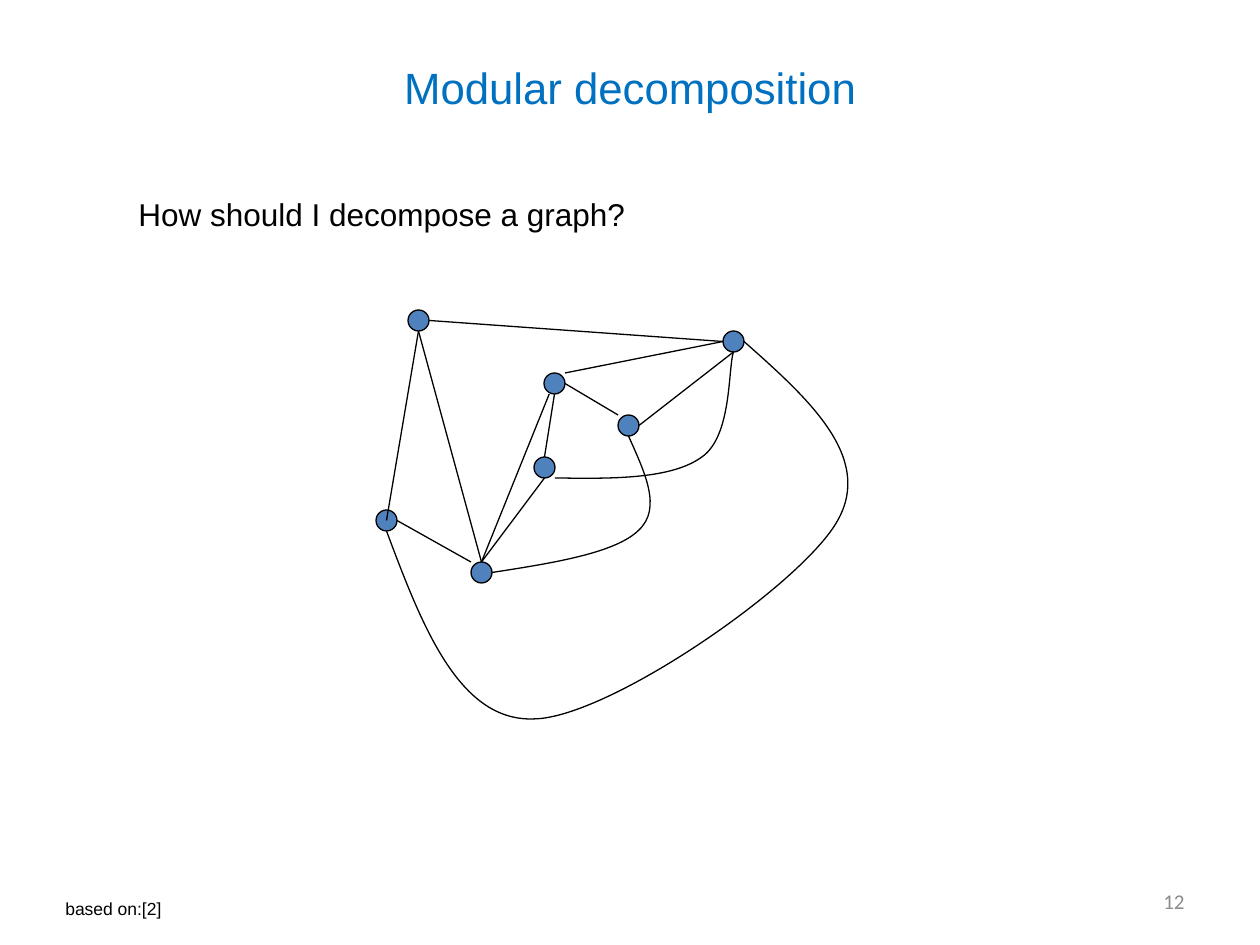
from lxml import etree
from pptx import Presentation
from pptx import util as u
from pptx.dml.color import RGBColor
from pptx.enum import shapes, text
from pptx.oxml.ns import qn

PX = 914400 / 126
NODE = 21

NODES = {
    "A": (32, 0), "B": (347, 21), "C": (168, 63), "D": (242, 105),
    "E": (158, 147), "F": (0, 200), "G": (95, 252),
}
# Places on a node as fractions of its size
PORTS = {
    "top": (0.5, 0), "right": (1, 0.5), "bottom": (0.5, 1), "left": (0, 0.5),
    "top left": (0, 0), "top right": (1, 0), "bottom right": (1, 1),
    "low left": (0.25, 1), "center": (0.5, 0.5),
}
EDGES = [
    ("E", "top", "C", "bottom"), ("C", "right", "D", "top left"),
    ("D", "right", "B", "bottom"), ("C", "top right", "B", "left"),
    ("E", "bottom", "G", "top"), ("C", "low left", "G", "top"),
    ("F", "right", "G", "top left"), ("F", "center", "A", "bottom"),
    ("G", "top", "A", "bottom"), ("A", "right", "B", "left"),
]
# Curved edges: start, Bezier points between, end
CURVES = [
    (("E", "bottom right"),
     [(238, 169), (296, 169), (326, 147), (356, 126), (352, 60)],
     ("B", "bottom")),
    (("D", "bottom"),
     [(269, 163), (286, 198), (263, 220), (240, 243), (178, 253)],
     ("G", "right")),
    (("B", "right"),
     [(433, 89), (497, 147), (462, 210), (428, 273), (233, 408),
      (158, 409), (83, 412), (46, 316)],
     ("F", "bottom")),
]


def px(n):
    return u.Emu(round(n * PX))


def color(value):
    return RGBColor.from_string(value)


def outline(sp):
    sp.line.color.rgb = color("000000")
    sp.line.width = u.Pt(0.75)


def add_text(s, box, words, size, hue="000000", font="Arial",
             align=text.PP_ALIGN.LEFT, anchor=text.MSO_ANCHOR.TOP):
    tf = s.shapes.add_textbox(*map(px, box)).text_frame
    tf.word_wrap = True
    tf.vertical_anchor = anchor
    tf.text = words
    p = tf.paragraphs[0]
    p.alignment = align
    r = p.runs[0]
    r.font.name = font
    r.font.size = u.Pt(size)
    r.font.color.rgb = color(hue)


def add_curve(s, points):
    """Draw cubic Bezier segments through a list of points."""
    points = [(px(x), px(y)) for x, y in points]
    builder = s.shapes.build_freeform(*points[0])
    builder.add_line_segments(points[1:], close=False)
    sp = builder.convert_to_shape()
    sp.shadow.inherit = False
    sp.fill.background()
    outline(sp)
    # Turn each three line segments into one cubic segment
    path = next(sp._element.iter(qn("a:path")))
    lines = path.findall(qn("a:lnTo"))
    for i in range(0, len(lines), 3):
        cubic = etree.SubElement(path, qn("a:cubicBezTo"))
        for line in lines[i:i + 3]:
            cubic.append(line[0])
            path.remove(line)


def add_graph(s, left, top):
    def port(node, place):
        x, y = NODES[node]
        fx, fy = PORTS[place]
        return left + x + NODE * fx, top + y + NODE * fy

    # Nodes
    for x, y in NODES.values():
        sp = s.shapes.add_shape(shapes.MSO_SHAPE.OVAL, px(left + x),
                                px(top + y), px(NODE), px(NODE))
        sp.shadow.inherit = False
        sp.fill.solid()
        sp.fill.fore_color.rgb = color("4F81BD")
        outline(sp)

    # Straight edges
    for a, a_place, b, b_place in EDGES:
        ends = port(a, a_place) + port(b, b_place)
        edge = s.shapes.add_connector(shapes.MSO_CONNECTOR.STRAIGHT,
                                      *map(px, ends))
        outline(edge)
        etree.SubElement(edge._element.spPr, qn("a:effectLst"))

    # Curved edges
    for start, between, end in CURVES:
        middle = [(left + x, top + y) for x, y in between]
        add_curve(s, [port(*start), *middle, port(*end)])


def add_footer(s, left, top, width):
    add_text(s, (left, top + 16, 232, 34), "based on:[2]", 10)
    add_text(s, (left + width - 294, top, 294, 50), "12", 12, "8C8C8C",
             "Calibri", text.PP_ALIGN.RIGHT, text.MSO_ANCHOR.MIDDLE)


def main():
    prs = Presentation()
    prs.slide_width, prs.slide_height = u.Inches(10), u.Inches(7.5)
    s = prs.slides.add_slide(prs.slide_layouts[6])

    # Title and question
    add_text(s, (63, 38, 1134, 98), "Modular decomposition", 25, "0070C0",
             align=text.PP_ALIGN.CENTER, anchor=text.MSO_ANCHOR.MIDDLE)
    add_text(s, (126, 189, 924, 693), "How should I decompose a graph?", 18)

    add_graph(s, 376, 310)
    add_footer(s, 53, 876, 1144)
    prs.save("out.pptx")


if __name__ == "__main__":
    main()
